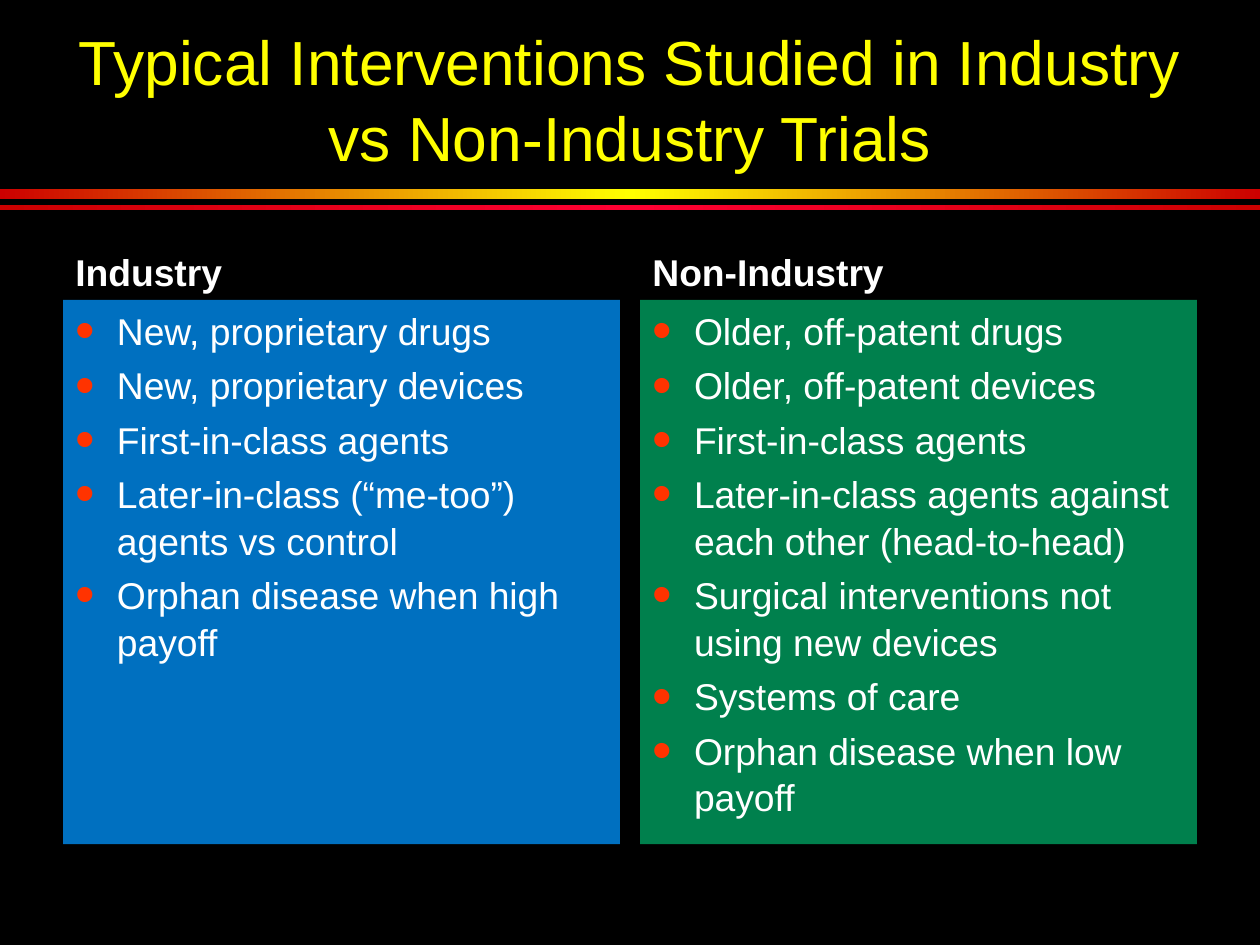
from lxml import etree
from pptx import Presentation
from pptx.dml.color import RGBColor
from pptx.enum.shapes import MSO_SHAPE
from pptx.enum.text import MSO_ANCHOR, PP_ALIGN
from pptx.oxml.ns import qn
from pptx.util import Inches, Pt

RECTANGLE = MSO_SHAPE.RECTANGLE
TOP, BOTTOM = MSO_ANCHOR.TOP, MSO_ANCHOR.BOTTOM
LEFT, CENTER = PP_ALIGN.LEFT, PP_ALIGN.CENTER

FONT = "Arial"
BODY_SIZE = 21.3
COLORS = {
    "background": "000000",
    "title": "FFFF00",
    "text": "FFFFFF",
    "bullet": "FF3300",
    "rule_edge": "CC0000",
    "thick_center": "FFFF00",
    "thin_center": "FF0033",
    "industry": "0070C0",
    "non_industry": "00804D",
}

TITLE = "Typical Interventions Studied in Industry vs Non-Industry Trials"
COLUMNS = [
    ("Industry", "industry", [
        "New, proprietary drugs",
        "New, proprietary devices",
        "First-in-class agents",
        "Later-in-class (“me-too”) agents vs control",
        "Orphan disease when high payoff",
    ]),
    ("Non-Industry", "non_industry", [
        "Older, off-patent drugs",
        "Older, off-patent devices",
        "First-in-class agents",
        "Later-in-class agents against each other (head-to-head)",
        "Surgical interventions not using new devices",
        "Systems of care",
        "Orphan disease when low payoff",
    ]),
]


def rgb(name):
    return RGBColor.from_string(COLORS[name])


def add_rectangle(slide, box):
    rectangle = slide.shapes.add_shape(RECTANGLE, *map(Inches, box))
    rectangle.shadow.inherit = False
    rectangle.line.fill.background()
    return rectangle


def prepare_frame(shape, anchor):
    frame = shape.text_frame
    frame.word_wrap = True
    frame.vertical_anchor = anchor
    return frame


def write_paragraph(paragraph, text, size, color, align=LEFT, bold=False):
    paragraph.alignment = align
    run = paragraph.add_run()
    run.text = text
    run.font.name = FONT
    run.font.size = Pt(size)
    run.font.bold = bold
    run.font.color.rgb = rgb(color)


def add_bullet(paragraph):
    properties = paragraph._p.get_or_add_pPr()
    properties.set("marL", str(Inches(0.33)))
    properties.set("indent", str(Inches(-0.33)))
    bullet_color = etree.SubElement(properties, qn("a:buClr"))
    etree.SubElement(bullet_color, qn("a:srgbClr"), val=COLORS["bullet"])
    etree.SubElement(properties, qn("a:buSzPct"), val="150000")
    etree.SubElement(properties, qn("a:buFont"), typeface=FONT)
    etree.SubElement(properties, qn("a:buChar"), char="•")


def add_title(slide, box):
    title = slide.shapes.add_textbox(*map(Inches, box))
    frame = prepare_frame(title, BOTTOM)
    write_paragraph(frame.paragraphs[0], TITLE, 35.6, "title", CENTER)
    frame.paragraphs[0].line_spacing = 1.02


def add_rule(slide, box, center):
    rule = add_rectangle(slide, box)
    rule.fill.gradient()
    rule.fill.gradient_angle = 0
    stops = rule._element.spPr.find(qn("a:gradFill")).find(qn("a:gsLst"))
    for stop in list(stops):
        stops.remove(stop)
    for percent, color in ((0, "rule_edge"), (50, center), (100, "rule_edge")):
        stop = etree.SubElement(stops, qn("a:gs"), pos=str(percent * 1000))
        etree.SubElement(stop, qn("a:srgbClr"), val=COLORS[color])


def add_column(slide, box, heading, color, interventions):
    left, top, width, height = box
    heading_height = 0.7
    label = slide.shapes.add_textbox(
        *map(Inches, (left, top, width, heading_height)))
    frame = prepare_frame(label, BOTTOM)
    write_paragraph(frame.paragraphs[0], heading, BODY_SIZE, "text", bold=True)

    panel = add_rectangle(
        slide, (left, top + heading_height, width, height - heading_height))
    panel.fill.solid()
    panel.fill.fore_color.rgb = rgb(color)
    frame = prepare_frame(panel, TOP)
    for index, intervention in enumerate(interventions):
        paragraph = frame.add_paragraph() if index else frame.paragraphs[0]
        add_bullet(paragraph)
        paragraph.line_spacing = 1.05
        if index:
            paragraph.space_before = Pt(4.2)
        write_paragraph(paragraph, intervention, BODY_SIZE, "text")


def main():
    presentation = Presentation()
    presentation.slide_width = Inches(10)
    presentation.slide_height = Inches(7.5)
    slide = presentation.slides.add_slide(presentation.slide_layouts[6])
    slide.background.fill.solid()
    slide.background.fill.fore_color.rgb = rgb("background")

    add_rule(slide, (0, 1.5, 10, 0.08), "thick_center")
    add_rule(slide, (0, 1.63, 10, 0.04), "thin_center")
    add_title(slide, (0.5, 0.18, 9, 1.25))

    margin, gap = 0.5, 0.16
    column_width = (10 - 2 * margin - gap) / 2
    for index, column in enumerate(COLUMNS):
        left = margin + index * (column_width + gap)
        add_column(slide, (left, 1.68, column_width, 5.02), *column)

    presentation.save("out.pptx")


if __name__ == "__main__":
    main()
